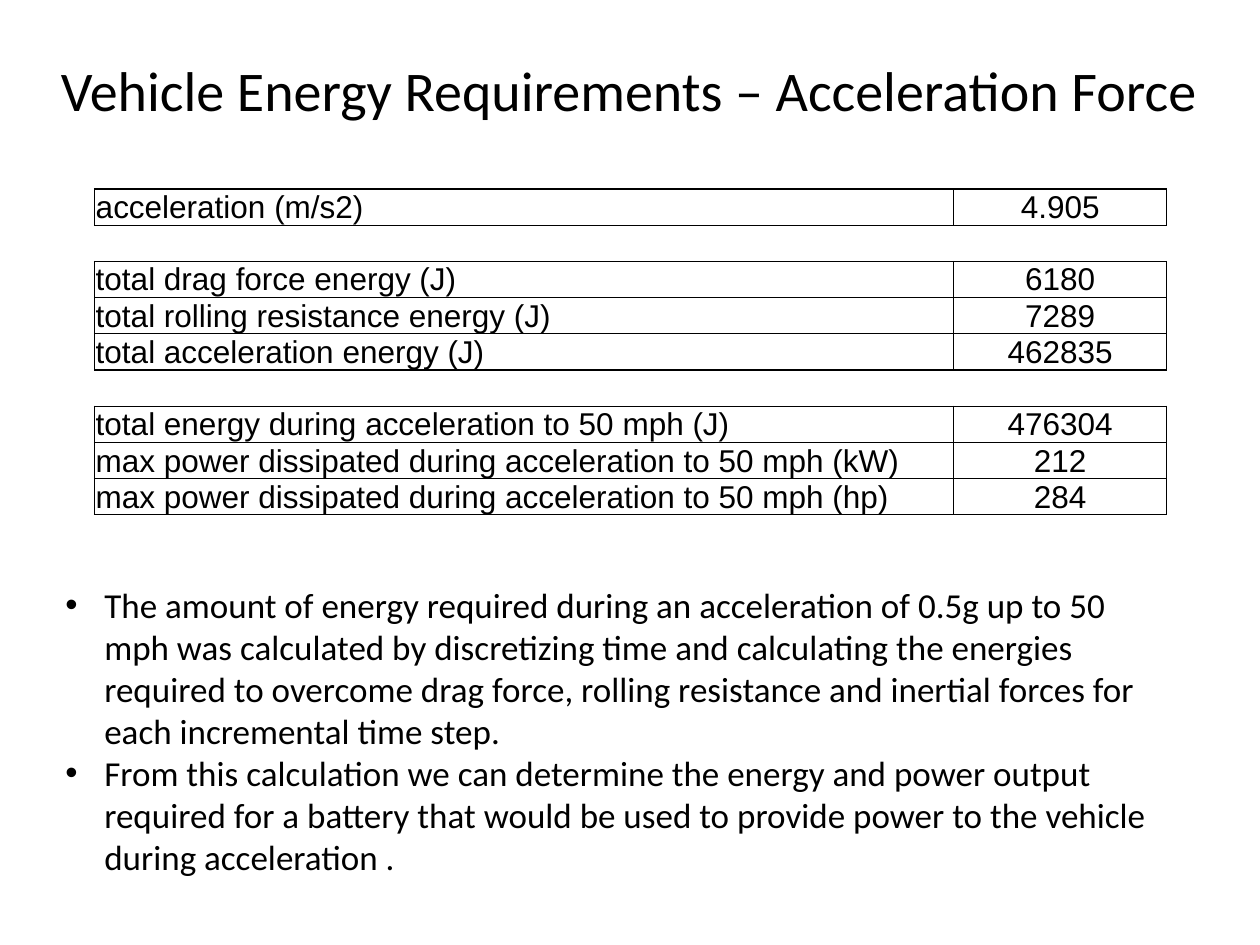
from lxml import etree
from pptx import Presentation
from pptx.dml.color import RGBColor
from pptx.enum.text import MSO_ANCHOR, PP_ALIGN
from pptx.oxml.ns import qn
from pptx.util import Inches, Pt

LEFT, CENTER = PP_ALIGN.LEFT, PP_ALIGN.CENTER
MIDDLE, BOTTOM = MSO_ANCHOR.MIDDLE, MSO_ANCHOR.BOTTOM
BLACK = "000000"


def style(par, name, size, color=BLACK):
    for run in par.runs:
        run.font.name = name
        run.font.size = Pt(size)
        run.font.color.rgb = RGBColor.from_string(color)


def border(cell, side, color=None):
    props = cell._tc.get_or_add_tcPr()
    line = etree.SubElement(props, qn("a:ln" + side), w=str(Pt(0.75)))
    if color:
        fill = etree.SubElement(line, qn("a:solidFill"))
        etree.SubElement(fill, qn("a:srgbClr"), val=color)
    else:
        etree.SubElement(line, qn("a:noFill"))


prs = Presentation()
prs.slide_width, prs.slide_height = Inches(10), Inches(7.5)
slide = prs.slides.add_slide(prs.slide_layouts[5])

# Title
title = slide.shapes.title
title.left, title.top = Inches(0.08), Inches(0.25)
title.width, title.height = Inches(9.83), Inches(0.92)
frame = title.text_frame
frame.text = "Vehicle Energy Requirements – Acceleration Force"
frame.vertical_anchor = MIDDLE
frame.paragraphs[0].alignment = CENTER
style(frame.paragraphs[0], "Calibri", 32)

# Table: the label spans three columns, and None is a gap between groups
rows = [
    ("acceleration (m/s2)", "4.905"),
    None,
    ("total drag force energy (J)", "6180"),
    ("total rolling resistance energy (J)", "7289"),
    ("total acceleration energy (J)", "462835"),
    None,
    ("total energy during acceleration to 50 mph (J)", "476304"),
    ("max power dissipated during acceleration to 50 mph (kW)", "212"),
    ("max power dissipated during acceleration to 50 mph (hp)", "284"),
]
widths = [1.29, 1.41, 4.12, 1.69]
high = Inches(2.59 / len(rows))
table = slide.shapes.add_table(
    len(rows), len(widths), Inches(0.75), Inches(1.5),
    Inches(sum(widths)), high * len(rows)).table
table.first_row = table.horz_banding = False
for col, width in zip(table.columns, widths):
    col.width = Inches(width)

for r, row in enumerate(rows):
    table.rows[r].height = high
    if row:
        table.cell(r, 0).merge(table.cell(r, 2))
    for c in range(len(widths)):
        cell = table.cell(r, c)
        cell.margin_left = cell.margin_right = Inches(0.01)
        cell.margin_top = cell.margin_bottom = 0
        cell.vertical_anchor = BOTTOM
        for side in "LRTB":
            border(cell, side, BLACK if row or side in "TB" else None)
        cell.fill.background()
        par = cell.text_frame.paragraphs[0]
        if row and c in (0, 3):
            par.text = row[c // 3]
            par.alignment = CENTER if c else LEFT
            style(par, "Arial", 18)
        else:
            etree.SubElement(par._p, qn("a:endParaRPr"), sz="1000")

# Bulleted notes
notes = [
    "The amount of energy required during an acceleration of 0.5g up to 50 mph "
    "was calculated by discretizing time and calculating the energies required "
    "to overcome drag force, rolling resistance and inertial forces for each "
    "incremental time step.",
    "From this calculation we can determine the energy and power output required "
    "for a battery that would be used to provide power to the vehicle during "
    "acceleration .",
]
box = slide.shapes.add_textbox(Inches(0.42), Inches(4.58), Inches(8.83), Inches(2.46))
frame = box.text_frame
frame.word_wrap = True
frame.text = "\n".join(notes)
for par in frame.paragraphs:
    style(par, "Calibri", 20)
    props = par._p.get_or_add_pPr()
    props.set("marL", str(Inches(0.31)))
    props.set("indent", str(-Inches(0.31)))
    etree.SubElement(props, qn("a:buFont"), typeface="Arial")
    etree.SubElement(props, qn("a:buChar"), char="•")

prs.save("out.pptx")
